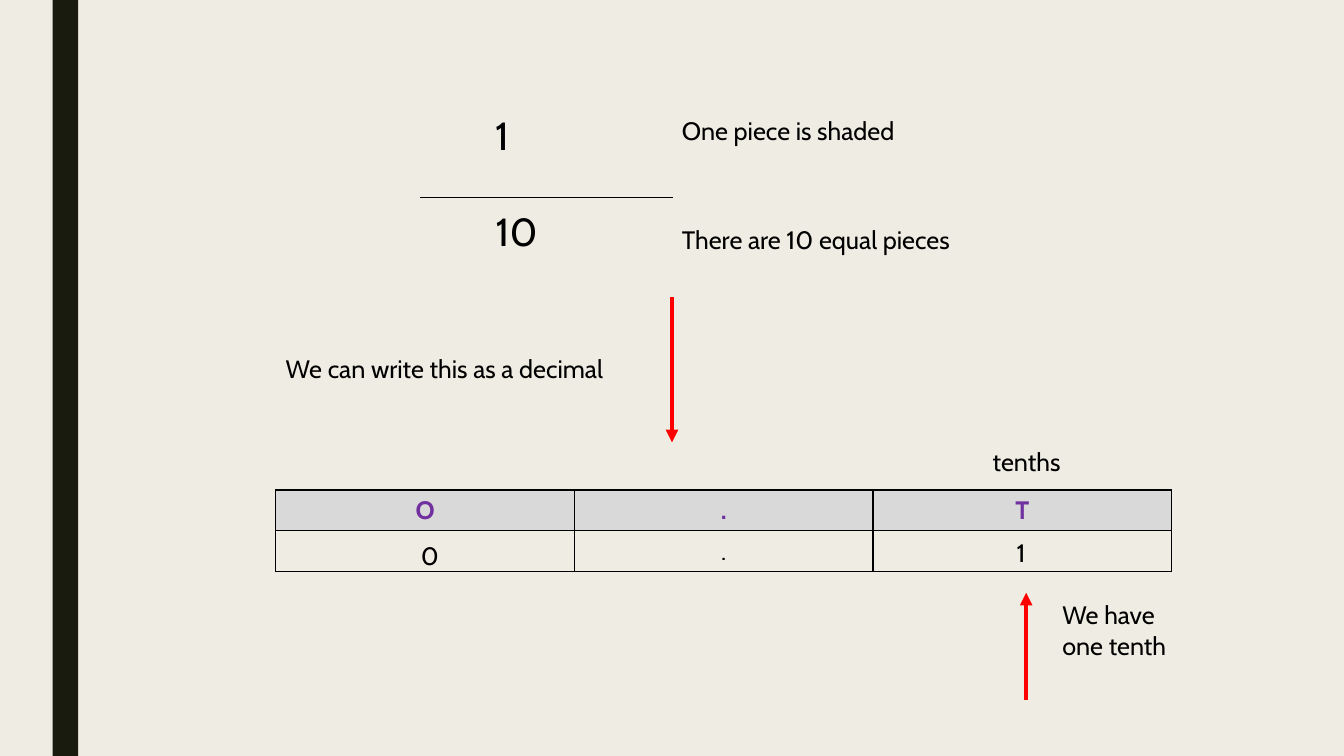
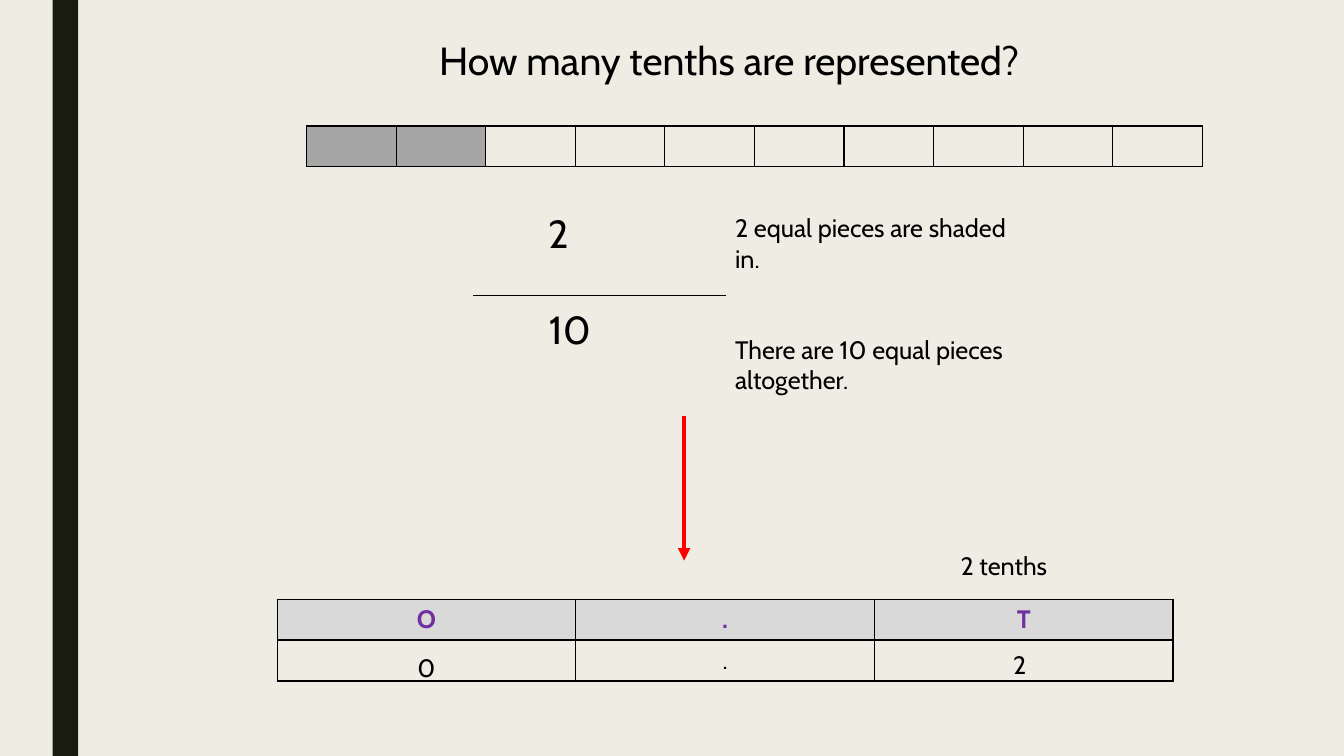
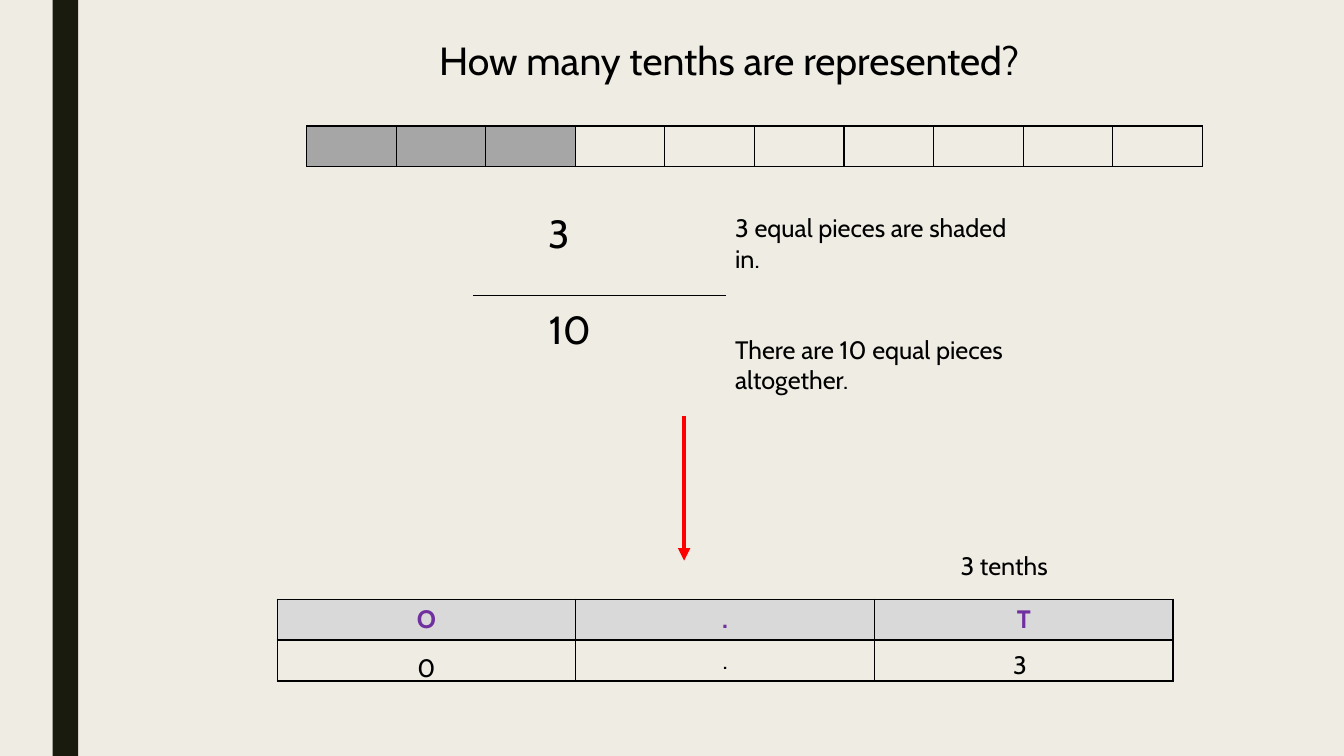
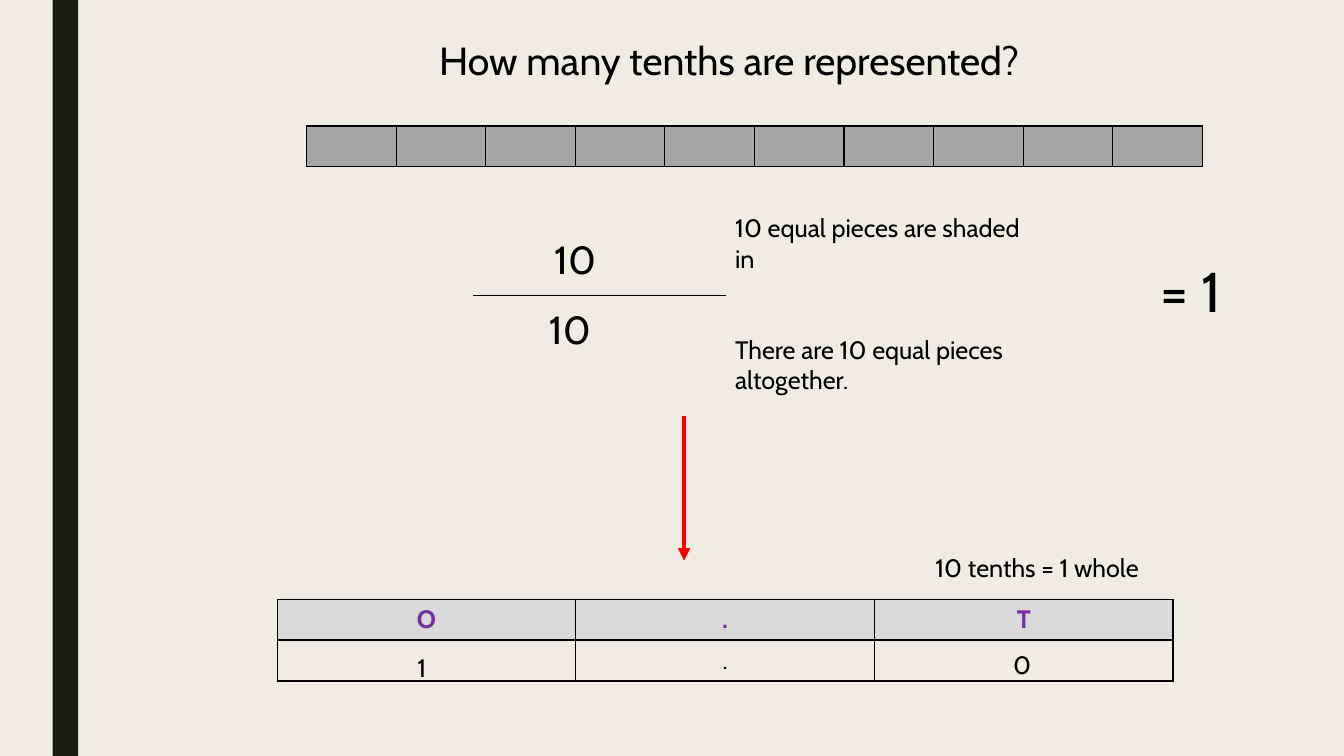
from lxml.etree import SubElement
from pptx import Presentation
from pptx.dml.color import RGBColor
from pptx.enum.shapes import MSO_CONNECTOR as Conn, MSO_SHAPE as Kind
from pptx.enum.text import MSO_ANCHOR as Anchor, MSO_AUTO_SIZE as Fit, PP_ALIGN as Align
from pptx.oxml import parse_xml
from pptx.oxml.ns import nsdecls, qn
from pptx.util import Pt

# Shared look
FONT = "Cabin"
CREAM = RGBColor(0xEF, 0xED, 0xE3)
DARK = RGBColor(0x19, 0x1B, 0x0E)
BLACK = RGBColor(0, 0, 0)
RED = RGBColor(0xFF, 0, 0)
PURPLE = RGBColor(0x70, 0x30, 0xA0)
SILVER = RGBColor(0xD9, 0xD9, 0xD9)
GREY = RGBColor(0xA6, 0xA6, 0xA6)

BODY, LARGE, HUGE = 18, 28, 40
WIDE, ROW = 640, 29.2
TITLE, BLANK = 5, 6


def style(para, size=BODY, color=BLACK, bold=False, align=Align.LEFT):
    para.alignment = align
    for run in para.runs:
        font = run.font
        font.name, font.size, font.bold = FONT, Pt(size), bold
        font.color.rgb = color


def place(shape, x, y, w, h):
    shape.left, shape.top, shape.width, shape.height = Pt(x), Pt(y), Pt(w), Pt(h)


def label(slide, text, x, y, w, h=29, size=BODY, align=Align.LEFT):
    frame = slide.shapes.add_textbox(Pt(x), Pt(y), Pt(w), Pt(h)).text_frame
    frame.word_wrap = True
    frame.text = text
    style(frame.paragraphs[0], size, align=align)


def title(slide, text):
    shape = slide.shapes.title
    place(shape, 306.5, 22.3, 439, 41)
    frame = shape.text_frame
    frame.text = text
    frame.auto_size = Fit.NONE
    frame.word_wrap = False
    frame.vertical_anchor = Anchor.TOP
    style(frame.paragraphs[0], LARGE)


def line(slide, x1, y1, x2, y2, color=BLACK, width=0.5):
    rule = slide.shapes.add_connector(Conn.STRAIGHT, Pt(x1), Pt(y1), Pt(x2), Pt(y2))
    rule.line.color.rgb = color
    rule.line.width = Pt(width)
    SubElement(rule.element.spPr, qn("a:effectLst"))
    return rule


def arrow(slide, x, y1, y2):
    rule = line(slide, x, y1, x, y2, RED, 3)
    tail = SubElement(rule.element.spPr.find(qn("a:ln")), qn("a:tailEnd"))
    tail.set("type", "triangle")


def border(cell):
    props = cell._tc.get_or_add_tcPr()
    for i, side in enumerate(("lnL", "lnR", "lnT", "lnB")):
        props.insert(i, parse_xml(
            f'<a:{side} {nsdecls("a")} w="{Pt(1)}"><a:solidFill>'
            f'<a:srgbClr val="{BLACK}"/></a:solidFill></a:{side}>'))


def grid(slide, rows, cols, x, y):
    """Add a plain table with black borders and no fill."""
    table = slide.shapes.add_table(
        rows, cols, Pt(x), Pt(y), Pt(WIDE), Pt(rows * ROW)).table
    table.first_row = table.horz_banding = False
    for col in table.columns:
        col.width = Pt(WIDE / cols)
    for row in table.rows:
        row.height = Pt(ROW)
    for cell in table.iter_cells():
        cell.fill.background()
        border(cell)
    return table


def shade(cell, color):
    cell.fill.solid()
    cell.fill.fore_color.rgb = color


def strip(slide, count):
    table = grid(slide, 1, 10, 219, 90)
    for i in range(count):
        shade(table.cell(0, i), GREY)


def chart(slide, x, y, ones, tenths, dx, dy):
    """Place-value table; dx, dy set the ones digit from its corner."""
    table = grid(slide, 2, 3, x, y)
    for i, text in enumerate("O.T"):
        cell = table.cell(0, i)
        shade(cell, SILVER)
        cell.text_frame.text = text
        cell.vertical_anchor = Anchor.MIDDLE
        style(cell.text_frame.paragraphs[0], BODY, PURPLE, True, Align.CENTER)
    point = table.cell(1, 1).text_frame
    point.text = "."
    style(point.paragraphs[0], align=Align.CENTER)
    label(slide, ones, x + dx, y + dy, 95)
    label(slide, tenths, x + dx + 425.5, y + dy - 2.2, 95)


def ratio(slide, x, y, top, dx=46.5, dy=-65.2):
    """Fraction over ten; dx, dy set the top number from the bar."""
    line(slide, x, y, x + 180.4, y)
    label(slide, "10", x + 47, y + 3.7, 63, 41, LARGE)
    label(slide, top, x + dx, y + dy, 63, 41, LARGE)


def setup(deck):
    deck.slide_width, deck.slide_height = Pt(960), Pt(540)
    fill = deck.slide_master.background.fill
    fill.solid()
    fill.fore_color.rgb = CREAM


def band(deck, slide):
    """Draw the side band and hand it to the master."""
    bar = slide.shapes.add_shape(Kind.RECTANGLE, Pt(37.6), 0, Pt(18.2), Pt(540))
    bar.shadow.inherit = False
    bar.fill.solid()
    bar.fill.fore_color.rgb = DARK
    bar.line.fill.background()
    bar.element.nvSpPr.cNvPr.set("id", "99")
    deck.slide_master.shapes.element.insert(2, bar.element)


def intro(slide):
    ratio(slide, 300, 141, "1")
    label(slide, "One piece is shaded", 480, 78.5, 228)
    label(slide, "There are 10 equal pieces", 480, 157, 287)
    arrow(slide, 480, 212.4, 316)
    label(slide, "We can write this as a decimal", 197, 249.1, 248)
    chart(slide, 197, 350, "0", "1", 96.5, 32.4)
    label(slide, "tenths", 702, 315.4, 65)
    arrow(slide, 733, 499.7, 423.4)
    label(slide, "We have one tenth", 751.7, 424.8, 95, 51)


def lesson(slide, count, shaded, ones, tenths, total, spot, offset):
    title(slide, "How many tenths are represented?")
    strip(slide, count)
    ratio(slide, 338, 211, str(count), *offset)
    label(slide, shaded, 518, 148.3, 228, 51)
    label(slide, "There are 10 equal pieces altogether.", 518, 235, 228, 51)
    arrow(slide, 488.7, 297, 400.5)
    chart(slide, 198, 428, ones, tenths, 93, 34.4)
    label(slide, total, *spot)


def main():
    deck = Presentation()
    setup(deck)
    add = lambda kind: deck.slides.add_slide(deck.slide_layouts[kind])

    # One tenth
    first = add(BLANK)
    band(deck, first)
    intro(first)

    # Two and three tenths
    for n in (2, 3):
        lesson(add(TITLE), n, f"{n} equal pieces are shaded in.", "0", str(n),
               f"{n} tenths", (679, 389.8, 115), ())

    # Ten tenths make one whole
    last = add(TITLE)
    lesson(last, 10, "10 equal pieces are shaded in", "1", "0",
           "10 tenths = 1 whole", (661, 391, 169), (50.8, -46.8))
    label(last, "= 1", 742, 180, 217, 55, HUGE, Align.CENTER)

    deck.save("out.pptx")


if __name__ == "__main__":
    main()
